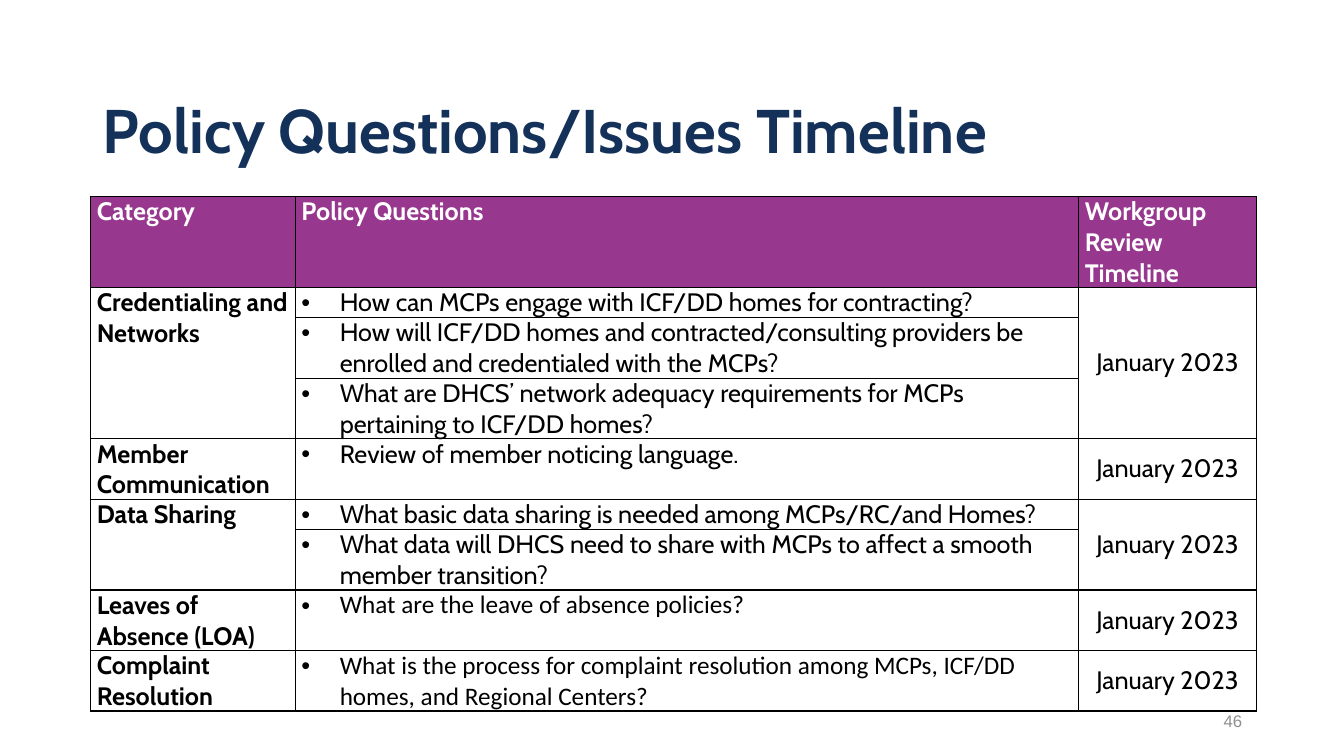
from lxml.etree import SubElement
from pptx import Presentation
from pptx.dml.color import RGBColor
from pptx.enum.text import MSO_ANCHOR, MSO_AUTO_SIZE, PP_ALIGN
from pptx.oxml.ns import qn
from pptx.util import Inches, Pt

TITLE = "Policy Questions/Issues Timeline"
PAGE_NUMBER = "46"
HEADINGS = ["Category", "Policy Questions", "Workgroup Review Timeline"]
TOPICS = [
    ("Credentialing and Networks", "January 2023", "Cabin", [
        ("How can MCPs engage with ICF/DD homes for contracting?", 1),
        ("How will ICF/DD homes and contracted/consulting providers be enrolled and credentialed with the MCPs?", 2),
        ("What are DHCS’ network adequacy requirements for MCPs pertaining to ICF/DD homes?", 2),
    ]),
    ("Member Communication", "January 2023", "Cabin", [
        ("Review of member noticing language.", 2),
    ]),
    ("Data Sharing", "January 2023", "Cabin", [
        ("What basic data sharing is needed among MCPs/RC/and Homes?", 1),
        ("What data will DHCS need to share with MCPs to affect a smooth member transition?", 2),
    ]),
    ("Leaves of Absence (LOA)", "January 2023", "Calibri", [
        ("What are the leave of absence policies?", 2),
    ]),
    ("Complaint Resolution", "January 2023", "Calibri", [
        ("What is the process for complaint resolution among MCPs, ICF/DD homes, and Regional Centers?", 2),
    ]),
]
COLORS = {"navy": "14315A", "purple": "97388E", "white": "FFFFFF", "black": "000000", "gray": "8F8F8F"}
COLUMNS = [2.03, 7.77, 1.76]
LINE_HEIGHT = 0.3
HEADING_LINES = 3
TABLE_LEFT, TABLE_TOP = 0.9, 1.95
BULLET_INDENT = Inches(0.38)


def write(frame, text, size=18, font="Cabin", color="black", bold=False,
          align=PP_ALIGN.LEFT, spacing=None, bullet=False):
    para = frame.paragraphs[0]
    para.alignment = align
    if spacing:
        para.line_spacing = spacing
    if bullet:
        properties = para._p.get_or_add_pPr()
        properties.set("marL", str(BULLET_INDENT))
        properties.set("indent", str(-BULLET_INDENT))
        SubElement(properties, qn("a:buFont"), typeface="Arial")
        SubElement(properties, qn("a:buChar"), char="•")
    span = para.add_run()
    span.text = text
    span.font.size = Pt(size)
    span.font.name = font
    span.font.bold = bold
    span.font.color.rgb = RGBColor.from_string(COLORS[color])


def frame_cell(cell, fill=None):
    cell.margin_left = cell.margin_right = Inches(0.06)
    cell.margin_top = cell.margin_bottom = 0
    properties = cell._tc.get_or_add_tcPr()
    for side in ("lnL", "lnR", "lnT", "lnB"):
        line = SubElement(properties, qn(f"a:{side}"), w=str(Pt(1)))
        solid = SubElement(line, qn("a:solidFill"))
        SubElement(solid, qn("a:srgbClr"), val=COLORS["black"])
    if fill:
        cell.fill.solid()
        cell.fill.fore_color.rgb = RGBColor.from_string(COLORS[fill])
    else:
        cell.fill.background()


def add_title(page):
    title = page.shapes.title
    title.left, title.top, title.width, title.height = map(Inches, (0.92, 0.6, 11.5, 1.45))
    title.text_frame.auto_size = MSO_AUTO_SIZE.NONE
    title.text_frame.vertical_anchor = MSO_ANCHOR.MIDDLE
    write(title.text_frame, TITLE, size=44, color="navy", bold=True, spacing=0.9)


def add_page_number(page):
    box = page.shapes.add_textbox(*map(Inches, (9.42, 6.95, 3, 0.4)))
    box.text_frame.word_wrap = True
    box.text_frame.vertical_anchor = MSO_ANCHOR.MIDDLE
    write(box.text_frame, PAGE_NUMBER, size=12, font="Arial", color="gray", align=PP_ALIGN.RIGHT)


def add_timeline(page):
    lines = [HEADING_LINES] + [count for topic in TOPICS for _, count in topic[3]]
    table = page.shapes.add_table(
        len(lines), len(COLUMNS), Inches(TABLE_LEFT), Inches(TABLE_TOP),
        Inches(sum(COLUMNS)), Inches(sum(lines) * LINE_HEIGHT)).table
    table.horz_banding = False
    for column, width in zip(table.columns, COLUMNS):
        column.width = Inches(width)
    for row, count in zip(table.rows, lines):
        row.height = Inches(count * LINE_HEIGHT)
    for index, cell in enumerate(table.iter_cells()):
        frame_cell(cell, "purple" if index < len(COLUMNS) else None)
    for column, heading in enumerate(HEADINGS):
        write(table.cell(0, column).text_frame, heading, color="white", bold=True)

    first = 1
    for category, review, font, questions in TOPICS:
        last = first + len(questions) - 1
        if last > first:
            for column in (0, 2):
                table.cell(first, column).merge(table.cell(last, column))
        write(table.cell(first, 0).text_frame, category, bold=True)
        for row, (question, _) in enumerate(questions, first):
            write(table.cell(row, 1).text_frame, question, font=font, bullet=True)
        timeline = table.cell(first, 2)
        timeline.vertical_anchor = MSO_ANCHOR.MIDDLE
        write(timeline.text_frame, review, align=PP_ALIGN.CENTER)
        first = last + 1


def main():
    deck = Presentation()
    deck.slide_width, deck.slide_height = Inches(13.33), Inches(7.5)
    page = deck.slides.add_slide(deck.slide_layouts[5])
    add_title(page)
    add_page_number(page)
    add_timeline(page)
    deck.save("out.pptx")


if __name__ == "__main__":
    main()
